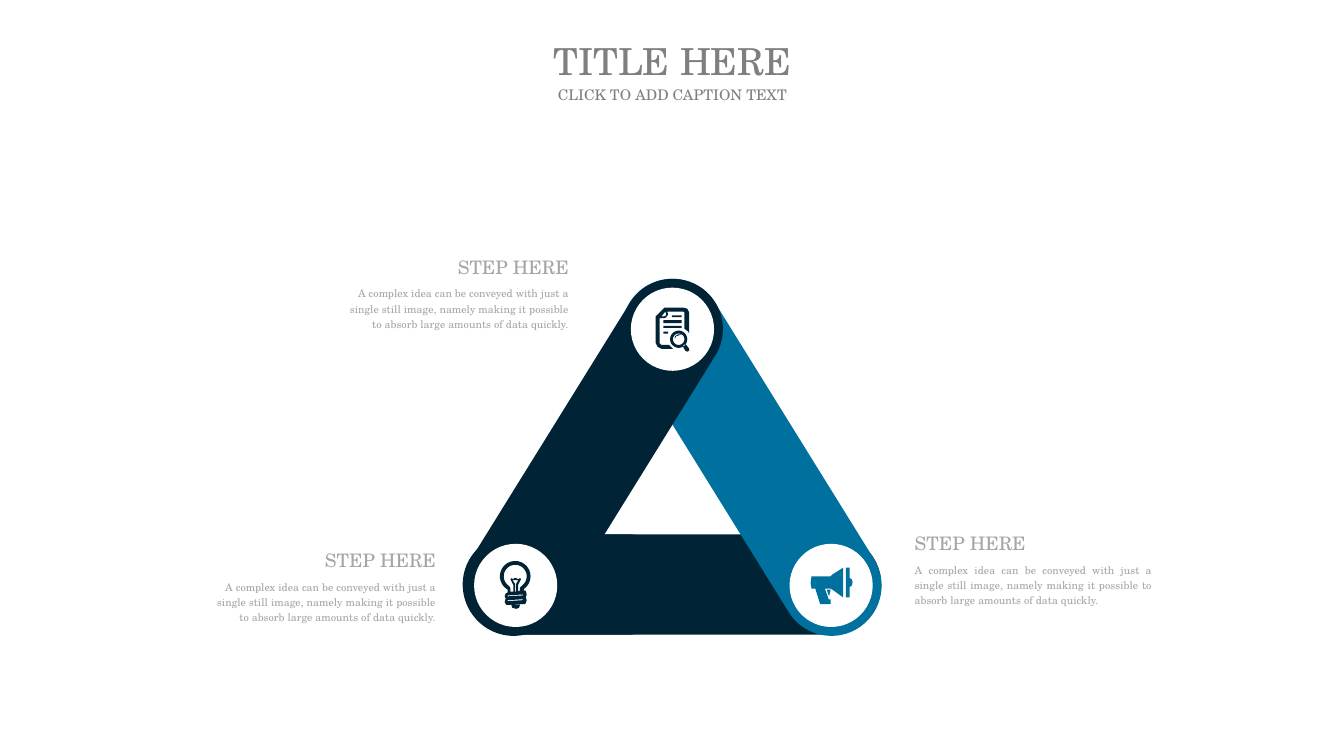
from math import cos, radians, sin

from pptx import Presentation
from pptx.dml.color import RGBColor
from pptx.enum.shapes import MSO_SHAPE
from pptx.enum.text import MSO_ANCHOR, MSO_AUTO_SIZE, PP_ALIGN
from pptx.util import Emu, Pt

PX = 9144  # one px is a hundredth of an inch
FONT = "TeX Gyre Schola"
NAVY, BLUE, WHITE = "002436", "00709F", "FFFFFF"
TITLE_GRAY, STEP_GRAY = "7F7F7F", "A5A5A5"
STEP_TEXT = ("A complex idea can be conveyed with just a single still image, "
             "namely making it possible to absorb large amounts of data quickly.")


def px(*lengths):
    return [Emu(round(length * PX)) for length in lengths]


def color(hex_string):
    return RGBColor.from_string(hex_string)


def paint(shape, fill):
    shape.fill.solid()
    shape.fill.fore_color.rgb = color(fill)
    shape.line.fill.background()
    shape.shadow.inherit = False


def add_bar(group, box, fill, rotation=0):
    bar = group.shapes.add_shape(MSO_SHAPE.ROUNDED_RECTANGLE, *px(*box))
    bar.adjustments[0] = 0.5
    bar.rotation = rotation
    paint(bar, fill)


def add_disc(group, left, top, size):
    disc = group.shapes.add_shape(MSO_SHAPE.OVAL, *px(left, top, size, size))
    paint(disc, WHITE)


def arc(center_x, center_y, radius, start=0, end=360, steps=36):
    angles = [radians(start + (end - start) * i / steps) for i in range(steps + 1)]
    return [(center_x + radius * cos(a), center_y + radius * sin(a)) for a in angles]


def rectangle(left, top, right, bottom):
    return [(left, top), (right, top), (right, bottom), (left, bottom)]


def add_icon(group, outlines, fill):
    """Draw closed outlines as one shape; inner outlines become holes."""
    first, *others = [[px(*point) for point in outline] for outline in outlines]
    builder = group.shapes.build_freeform(*first[0])
    builder.add_line_segments(first[1:])
    for outline in others:
        builder.move_to(*outline[0])
        builder.add_line_segments(outline[1:])
    paint(builder.convert_to_shape(), fill)


def write(shape, text, size, fill, align, spacing=1.0):
    frame = shape.text_frame
    frame.text = text
    frame.word_wrap = True
    frame.auto_size = MSO_AUTO_SIZE.NONE
    para = frame.paragraphs[0]
    para.alignment = align
    para.line_spacing = spacing
    font = para.runs[0].font
    font.name, font.size = FONT, Pt(size)
    font.color.rgb = color(fill)


def write_heading(shape, text, size):
    write(shape, text, size, TITLE_GRAY, PP_ALIGN.CENTER)
    frame = shape.text_frame
    frame.vertical_anchor = MSO_ANCHOR.MIDDLE
    frame.margin_left = frame.margin_right = 0
    frame.margin_top = frame.margin_bottom = 0


def add_step(page, left, top, width, heading_align, body_align):
    group = page.shapes.add_group_shape()
    heading = group.shapes.add_textbox(*px(left, top, width, 38))
    write(heading, "STEP HERE", 14, STEP_GRAY, heading_align, 1.2)
    body = group.shapes.add_textbox(*px(left, top + 35, width, 59))
    write(body, STEP_TEXT, 8, STEP_GRAY, body_align, 1.2)


def document_outlines():
    sheet = [(696, 322), (715, 322), (719, 323), (721, 327), (721, 349), (720, 347),
             (716, 344), (716, 327), (715, 326), (698, 326), (699, 329), (697, 332),
             (695, 333), (690, 333), (690, 359), (692, 361), (700, 361), (704, 365),
             (692, 365), (688, 363), (686, 359), (686, 331), (687, 330), (695, 322)]
    fold = [(696, 326), (692, 331), (695, 331), (697, 330), (697, 329)]
    text_lines = [rectangle(703, 330, 713, 332), rectangle(694, 335, 713, 338),
                  rectangle(694, 341, 713, 343), rectangle(694, 347, 699, 349)]
    glint = [(706, 355), (707, 352), (713, 350), (709, 350), (706, 352)]
    handle = [(714, 362), (717, 367), (719, 368), (721, 367), (721, 365), (718, 361),
              (717, 360)]
    return [sheet, fold, *text_lines, arc(710, 355, 9), arc(710, 355, 6), glint, handle]


def bulb_outlines():
    body = arc(539, 603, 16, 125, 415) + [
        (548, 616), (548, 618), (550, 618), (551, 622), (550, 625), (551, 628),
        (550, 631), (549, 632), (530, 633), (529, 632), (528, 630), (529, 626),
        (528, 624), (529, 621), (531, 620), (531, 617)]
    glass = arc(539, 603, 12, 125, 415) + [
        (544, 615), (544, 618), (542, 619), (542, 612), (545, 606), (544, 605),
        (542, 606), (540, 605), (538, 605), (537, 606), (535, 605), (534, 606),
        (537, 612), (537, 619), (534, 619), (534, 615)]
    filament = [(542, 607), (540, 611), (540, 619), (539, 619), (539, 611), (536, 607)]
    tip = [(544, 633), (535, 633), (536, 636), (540, 637), (543, 636)]
    threads = [[(547, y), (547, y + 1), (531, y + 2), (531, y + 1)] for y in (622, 627)]
    return [body, glass, filament, tip, *threads]


def megaphone_outlines():
    horn = [(849, 603), (869, 603), (871, 601), (882, 594), (882, 625), (871, 617),
            (869, 616), (863, 616), (867, 627), (869, 627), (869, 632), (858, 632),
            (853, 616), (849, 616), (848, 610)]
    rim = [(889, 605), (891, 606), (892, 609), (891, 613), (889, 614), (889, 625),
           (885, 625), (885, 594), (889, 594)]
    trigger = [(869, 617), (865, 617), (867, 623), (868, 623), (868, 621)]
    return [horn, rim, trigger]


def add_triangle(page):
    group = page.shapes.add_group_shape()
    # Sides; the short bar puts the lower left corner back on top
    add_bar(group, (486, 559, 436, 105), NAVY)
    add_bar(group, (576, 426, 421, 105), BLUE, 58.2)
    add_bar(group, (410, 426, 421, 105), NAVY, 301.8)
    add_bar(group, (484, 559, 225, 105), NAVY)
    # Corners
    for left, top in ((660, 301), (496, 569), (826, 569)):
        add_disc(group, left, top, 87)
    add_icon(group, document_outlines(), NAVY)
    add_icon(group, bulb_outlines(), NAVY)
    add_icon(group, megaphone_outlines(), BLUE)


def main():
    deck = Presentation()
    deck.slide_width, deck.slide_height = px(1406, 791)
    page = deck.slides.add_slide(deck.slide_layouts[5])

    # Title and caption
    title = page.shapes.title
    title.left, title.top, title.width, title.height = px(577, 39, 253, 49)
    write_heading(title, "TITLE HERE", 28)
    caption = page.shapes.add_textbox(*px(577, 90, 253, 19))
    write_heading(caption, "CLICK TO ADD CAPTION TEXT", 11)

    # Triangle and its three steps
    add_triangle(page)
    add_step(page, 947, 547, 268, PP_ALIGN.LEFT, PP_ALIGN.JUSTIFY)
    add_step(page, 346, 258, 259, PP_ALIGN.RIGHT, PP_ALIGN.RIGHT)
    add_step(page, 207, 565, 259, PP_ALIGN.RIGHT, PP_ALIGN.RIGHT)

    deck.save("out.pptx")


if __name__ == "__main__":
    main()
